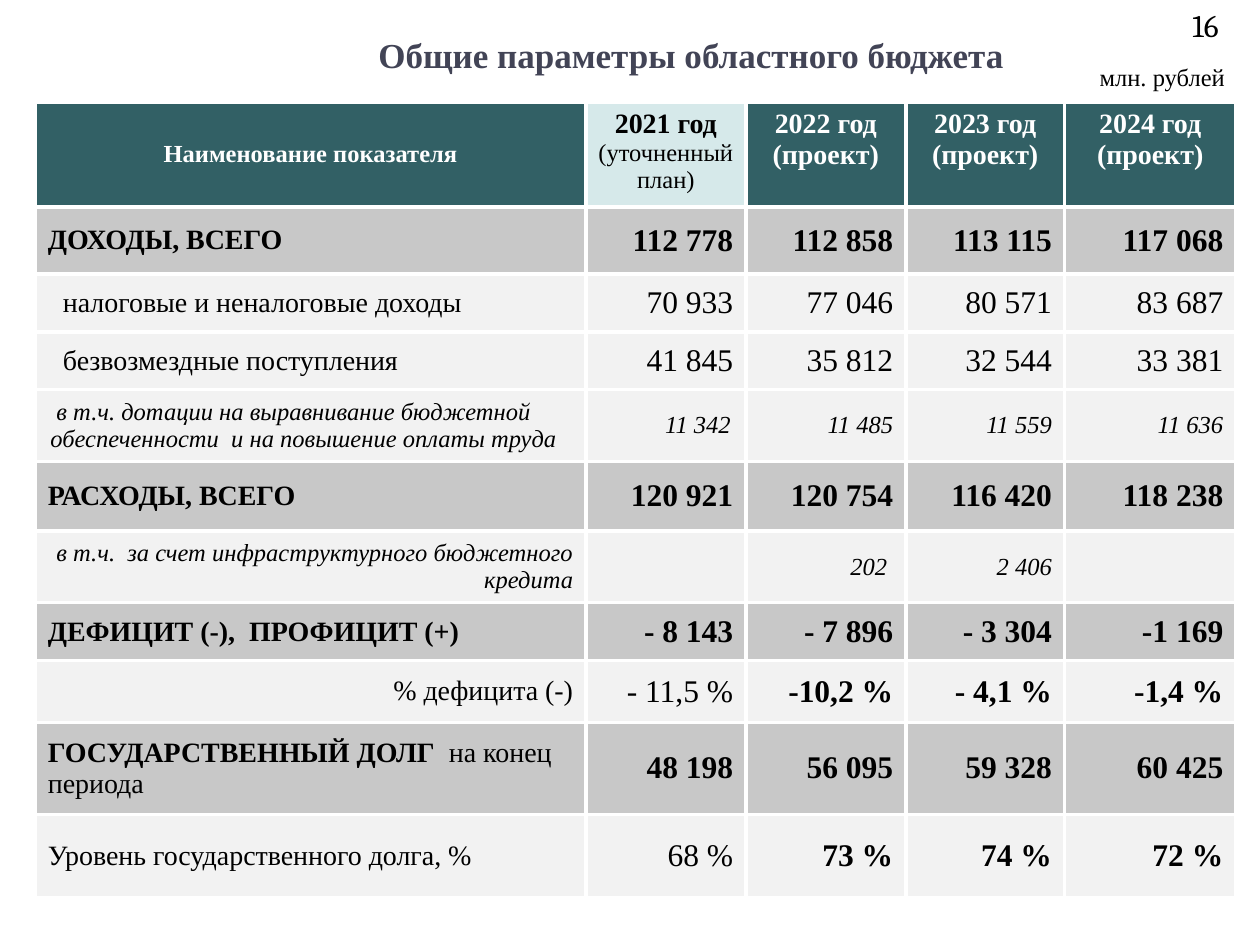
from dataclasses import dataclass
from typing import Any

from lxml.etree import SubElement
from pptx import Presentation
from pptx.dml.color import RGBColor
from pptx.enum.text import MSO_ANCHOR, PP_ALIGN
from pptx.oxml.ns import qn
from pptx.util import Inches, Pt

HUES = {"ink": "000000", "title": "424456", "white": "FFFFFF", "teal": "326065",
        "pale": "D6E9EA", "total": "C8C8C8", "plain": "F2F2F2"}
FACE = "Times New Roman"
WIDTHS = [4.37, 1.27, 1.27, 1.26, 1.36]
LEFT, MID, RIGHT = PP_ALIGN.LEFT, PP_ALIGN.CENTER, PP_ALIGN.RIGHT


@dataclass
class Run:
    text: str
    size: int
    bold: bool = False
    italic: bool = False
    hue: str = "ink"
    face: str = FACE


@dataclass
class Row:
    height: float
    label: list[Run]
    values: list[str]
    total: bool = False
    strong: bool = False
    italic: bool = False
    align: Any = LEFT
    margin: float = 0.1


def write(frame: Any, paras: list[list[Run]], align: Any) -> None:
    for i, runs in enumerate(paras):
        para = frame.add_paragraph() if i else frame.paragraphs[0]
        para.alignment = align
        for run in runs:
            part = para.add_run()
            part.text = run.text
            form = {"size": Pt(run.size), "bold": run.bold,
                    "italic": run.italic, "name": run.face}
            for key, value in form.items():
                setattr(part.font, key, value)
            part.font.color.rgb = RGBColor.from_string(HUES[run.hue])


def paint(cell: Any, hue: str) -> None:
    props = cell._tc.get_or_add_tcPr()
    for side in ("lnL", "lnR", "lnT", "lnB"):
        line = SubElement(props, qn(f"a:{side}"), w=str(Pt(2.25)))
        fill = SubElement(line, qn("a:solidFill"))
        SubElement(fill, qn("a:srgbClr"), val=HUES["white"])
    cell.fill.solid()
    cell.fill.fore_color.rgb = RGBColor.from_string(HUES[hue])


def draw_head(table: Any) -> None:
    heads = [[[Run("Наименование показателя", 14, True, hue="white")]],
             [[Run("2021 год ", 16, True), Run("(уточненный план)", 14)]]]
    for year in (2022, 2023, 2024):
        heads.append([[Run(text, 16, True, hue="white")]
                      for text in (f"{year} год", "(проект)")])
    for col, paras in enumerate(heads):
        cell = table.cell(0, col)
        paint(cell, "pale" if col == 1 else "teal")
        write(cell.text_frame, paras, MID)
    table.cell(0, 0).vertical_anchor = MSO_ANCHOR.MIDDLE
    for side in ("margin_left", "margin_right"):
        setattr(table.cell(0, 1), side, Inches(0.05))


def draw_row(table: Any, index: int, row: Row) -> None:
    table.rows[index].height = Inches(row.height)
    for col in range(len(WIDTHS)):
        cell = table.cell(index, col)
        paint(cell, "total" if row.total else "plain")
        cell.vertical_anchor = MSO_ANCHOR.MIDDLE
        if col == 0:
            cell.margin_left = Inches(row.margin)
            write(cell.text_frame, [row.label], row.align)
        elif row.values[col - 1]:
            bold = row.total or (row.strong and col > 1)
            run = Run(row.values[col - 1], 14 if row.italic else 18, bold, row.italic)
            write(cell.text_frame, [[run]], RIGHT)


def add_note(slide: Any, box: list[float], run: Run, anchor: Any) -> None:
    frame = slide.shapes.add_textbox(*map(Inches, box)).text_frame
    frame.word_wrap = True
    frame.vertical_anchor = anchor
    write(frame, [[run]], RIGHT)


ROWS = [
    Row(0.53, [Run("ДОХОДЫ, ВСЕГО", 16, True)],
        ["112 778", "112 858", "113 115", "117 068"], total=True),
    Row(0.46, [Run("налоговые и неналоговые доходы", 16)],
        ["70 933", "77 046", "80 571", "83 687"], margin=0.22),
    Row(0.46, [Run("безвозмездные поступления", 16)],
        ["41 845", "35 812", "32 544", "33 381"], margin=0.22),
    Row(0.57, [Run(" в т.ч. дотации на выравнивание бюджетной обеспеченности  "
                   "и на повышение оплаты труда", 14, italic=True)],
        ["11 342", "11 485", "11 559", "11 636"], italic=True, margin=0.12),
    Row(0.55, [Run("РАСХОДЫ, ВСЕГО", 16, True)],
        ["120 921", "120 754", "116 420", "118 238"], total=True),
    Row(0.57, [Run("в т.ч.  за счет инфраструктурного бюджетного кредита", 14, italic=True)],
        ["", "202 ", "2 406", ""], italic=True, align=RIGHT),
    Row(0.46, [Run("ДЕФИЦИТ (-),  ПРОФИЦИТ (+)", 16, True)],
        ["- 8 143", "- 7 896", "- 3 304", "-1 169"], total=True),
    Row(0.49, [Run("% дефицита (-)", 16)],
        ["- 11,5 %", "-10,2 %", "- 4,1 %", "-1,4 %"], strong=True, align=RIGHT),
    Row(0.73, [Run("ГОСУДАРСТВЕННЫЙ ДОЛГ  ", 16, True), Run("на конец периода", 16)],
        ["48 198", "56 095", "59 328", "60 425"], total=True),
    Row(0.66, [Run("Уровень государственного долга, %", 16)],
        ["68 %", "73 %", "74 %", "72 %"], strong=True),
]


def main() -> None:
    deck = Presentation()
    deck.slide_width, deck.slide_height = Inches(10), Inches(7.5)
    slide = deck.slides.add_slide(deck.slide_layouts[5])

    title = slide.shapes.title
    place = {"left": 1.46, "top": 0.2, "width": 8.05, "height": 0.47}
    for key, value in place.items():
        setattr(title, key, Inches(value))
    title.text_frame.vertical_anchor = MSO_ANCHOR.MIDDLE
    write(title.text_frame,
          [[Run("Общие параметры областного бюджета", 20, True, hue="title")]], MID)

    add_note(slide, [8.94, 0, 0.83, 0.4], Run("16", 18, face="Cambria"), MSO_ANCHOR.BOTTOM)
    add_note(slide, [8.34, 0.44, 1.48, 0.34], Run("млн. рублей", 14), MSO_ANCHOR.TOP)

    box = map(Inches, (0.28, 0.81, 9.53, 6.32))
    table = slide.shapes.add_table(len(ROWS) + 1, len(WIDTHS), *box).table
    for col, width in zip(table.columns, WIDTHS):
        col.width = Inches(width)
    table.rows[0].height = Inches(0.82)
    draw_head(table)
    for index, row in enumerate(ROWS, 1):
        draw_row(table, index, row)
    tight = table.cell(4, 1)
    tight.margin_right = Inches(0.12)
    deck.save("out.pptx")


if __name__ == "__main__":
    main()
